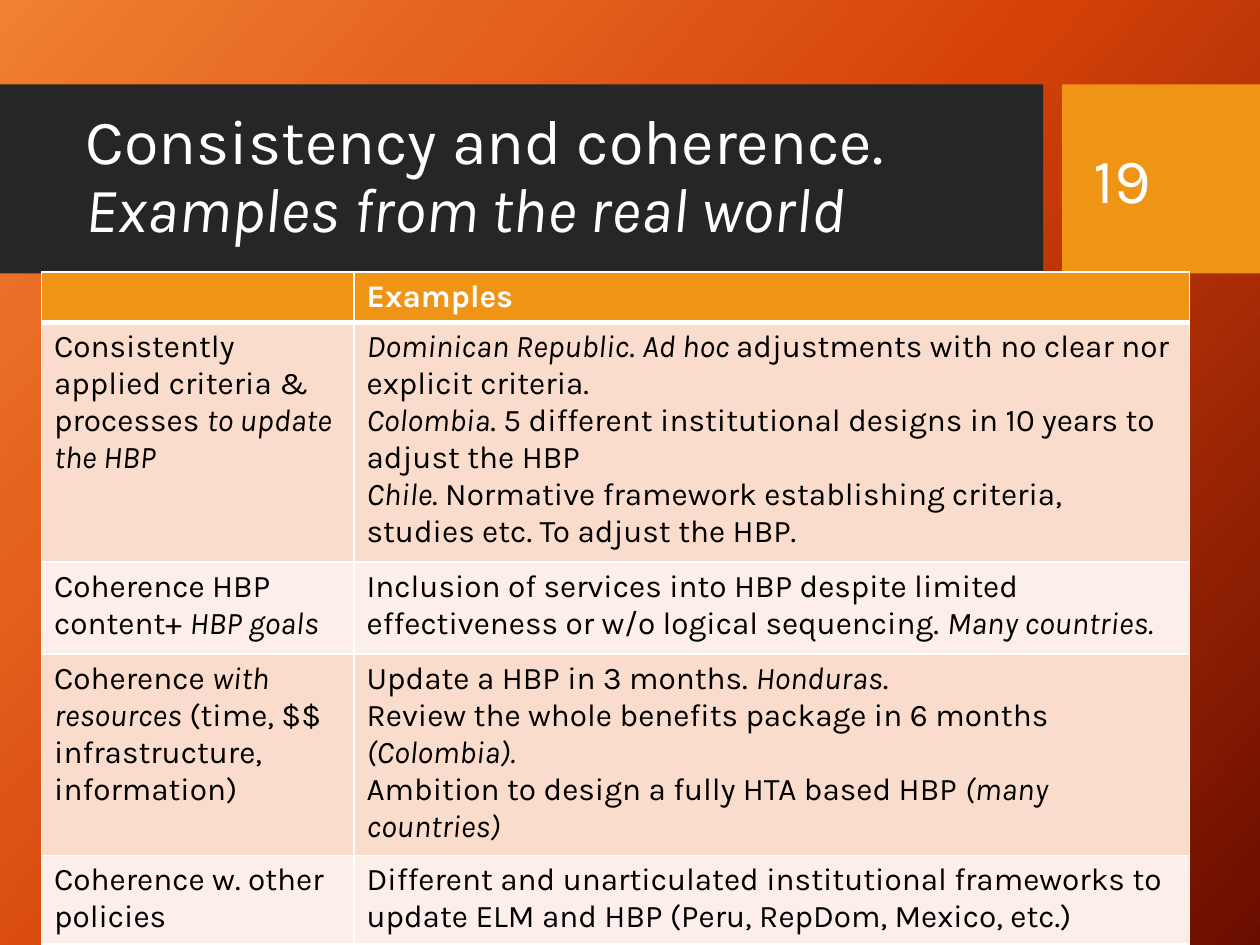
from copy import deepcopy

from lxml import etree
from pptx import Presentation
from pptx import util as u
from pptx.dml.color import RGBColor
from pptx.enum import shapes, text
from pptx.oxml import ns

COLUMNS, ROWS = 100, 75  # slide grid of tenth-inch squares
CELL = u.Inches(0.1)
FONT = "Karla"

WHITE = RGBColor(0xFF, 0xFF, 0xFF)
BLACK = RGBColor(0, 0, 0)
CHARCOAL = RGBColor(0x26, 0x26, 0x26)
AMBER = RGBColor(0xF0, 0x94, 0x15)
PEACH = RGBColor(0xF9, 0xDC, 0xCC)
PALE_PEACH = RGBColor(0xFC, 0xEE, 0xE8)
BACKDROP = [(0, "F18031"), (50, "D54209"), (100, "6A0D00")]

# Asterisks enclose italic words; each string in a list is a paragraph.
HEADING = "Consistency and coherence.\v*Examples from the real world*"
EXAMPLES = [
    ([""], ["Examples"]),
    (["Consistently applied criteria & processes *to update the HBP*"],
     ["*Dominican Republic*. *Ad hoc *adjustments with no clear nor explicit criteria.",
      "*Colombia*. 5 different institutional designs in 10 years to adjust the HBP",
      "*Chile*. Normative framework establishing criteria, studies etc. To adjust the HBP."]),
    (["Coherence HBP content+ *HBP goals*"],
     ["Inclusion of services into HBP despite limited effectiveness or w/o logical "
      "sequencing. *Many countries.*"]),
    (["Coherence *with resources* (time, $$ infrastructure, information)"],
     ["Update a HBP in 3 months. *Honduras*.",
      "Review the whole benefits package in 6 months *(Colombia).*",
      "Ambition to design a fully HTA based HBP *(many countries)*"]),
    (["Coherence w. other policies"],
     ["Different and unarticulated institutional frameworks to update ELM and HBP "
      "(Peru, RepDom, Mexico, etc.)"]),
]
COLUMN_WIDTHS = [24.8, 66.3]
ROW_HEIGHTS = [3.9, 18.6, 7.3, 15.6, 6.8]


def grid(*counts):
    return [round(count * CELL) for count in counts]


def write(frame, paragraphs, size, color, bold=False):
    for index, marked in enumerate(paragraphs):
        paragraph = frame.paragraphs[0] if index == 0 else frame.add_paragraph()
        paragraph.font.size = u.Pt(size)
        for part, words in enumerate(marked.split("*")):
            if not words:
                continue
            if words.endswith("\v"):
                words, breaks = words[:-1], True
            else:
                breaks = False
            run = paragraph.add_run()
            run.text = words
            run.font.name, run.font.size = FONT, u.Pt(size)
            run.font.color.rgb = color
            run.font.bold, run.font.italic = bold, part % 2 == 1
            if breaks:
                paragraph.add_line_break()


def paint_backdrop(slide):
    fill = slide.background.fill
    fill.gradient()
    fill.gradient_angle = 360 - 42
    stops = next(slide.element.iter(ns.qn("a:gsLst")))
    template = deepcopy(stops[0])
    for child in list(template):
        template.remove(child)
    for stop in list(stops):
        stops.remove(stop)
    for position, color in BACKDROP:
        stop = deepcopy(template)
        stop.set("pos", str(position * 1000))
        etree.SubElement(stop, ns.qn("a:srgbClr"), val=color)
        stops.append(stop)


def add_panel(slide, box, color, label_box, label, spacing=1.0):
    """Coloured block with a vertically centred label in front of it."""
    panel = slide.shapes.add_shape(shapes.MSO_SHAPE.RECTANGLE, *grid(*box))
    panel.shadow.inherit = False
    panel.fill.solid()
    panel.fill.fore_color.rgb = color
    panel.line.fill.background()
    frame = slide.shapes.add_textbox(*grid(*label_box)).text_frame
    frame.word_wrap = True
    frame.vertical_anchor = text.MSO_ANCHOR.MIDDLE
    write(frame, [label], 36, WHITE)
    frame.paragraphs[0].line_spacing = spacing


def add_border(cell, side, width):
    line = etree.SubElement(cell._tc.get_or_add_tcPr(), ns.qn(f"a:ln{side}"),
                            w=str(u.Pt(width)))
    fill = etree.SubElement(line, ns.qn("a:solidFill"))
    etree.SubElement(fill, ns.qn("a:srgbClr"), val=str(WHITE))


def add_examples_table(slide, left, top):
    box = grid(left, top, sum(COLUMN_WIDTHS), sum(ROW_HEIGHTS))
    table = slide.shapes.add_table(len(EXAMPLES), len(COLUMN_WIDTHS), *box).table
    table.first_row = table.horz_banding = False
    for column, width in zip(table.columns, grid(*COLUMN_WIDTHS)):
        column.width = width
    for row, height in zip(table.rows, grid(*ROW_HEIGHTS)):
        row.height = height
    for r, entries in enumerate(EXAMPLES):
        header = r == 0
        for c, paragraphs in enumerate(entries):
            cell = table.cell(r, c)
            write(cell.text_frame, paragraphs, 18, WHITE if header else BLACK, header)
            for side in "LRTB":
                under_header = (r, side) in [(0, "B"), (1, "T")]
                add_border(cell, side, 3 if under_header else 1)
            cell.fill.solid()
            cell.fill.fore_color.rgb = (
                AMBER if header else PEACH if r % 2 else PALE_PEACH)


def main():
    deck = Presentation()
    deck.slide_width, deck.slide_height = grid(COLUMNS, ROWS)
    slide = deck.slides.add_slide(deck.slide_layouts[6])
    paint_backdrop(slide)
    add_panel(slide, (0, 6.7, 82.8, 15), CHARCOAL, (5.8, 8.2, 75.4, 11.8), HEADING, 0.9)
    add_panel(slide, (84.3, 6.7, 15.7, 15), AMBER, (85.8, 8.2, 12.7, 11.9), "19")
    add_examples_table(slide, 3.3, 21.6)
    deck.save("out.pptx")


if __name__ == "__main__":
    main()
